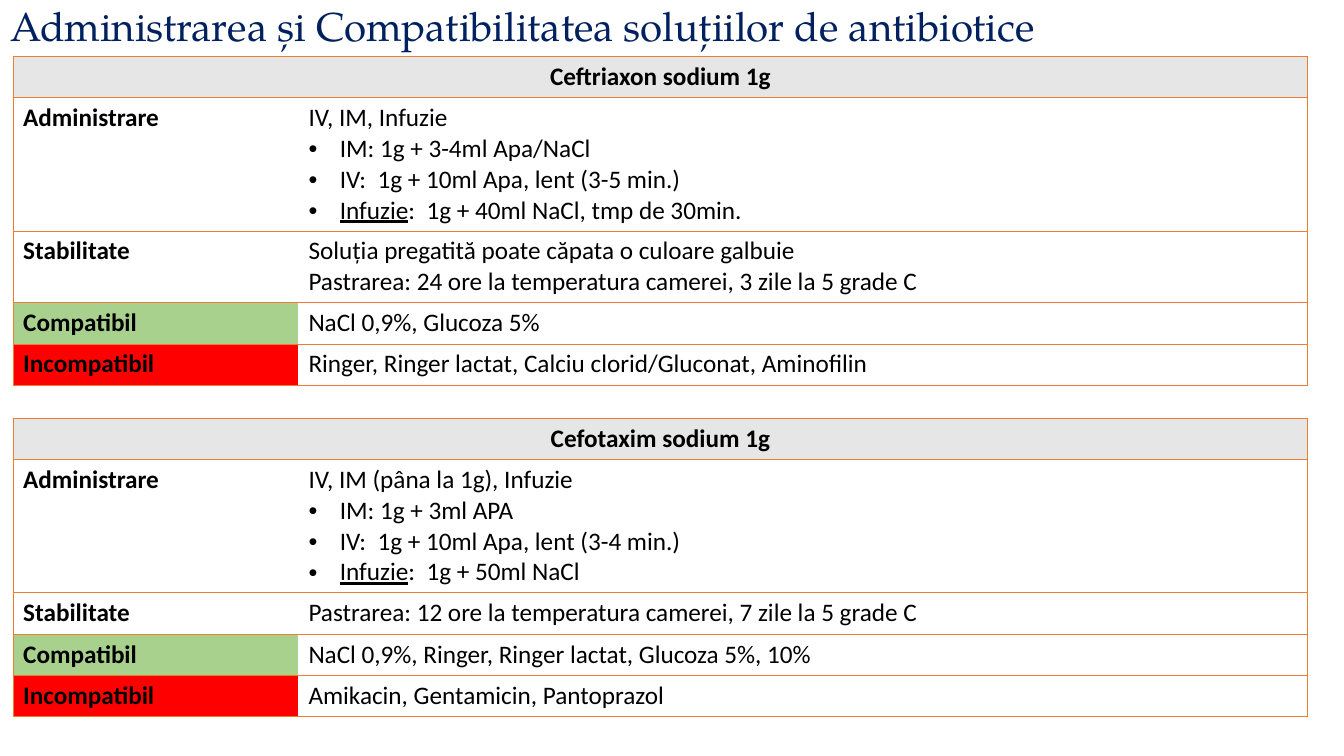
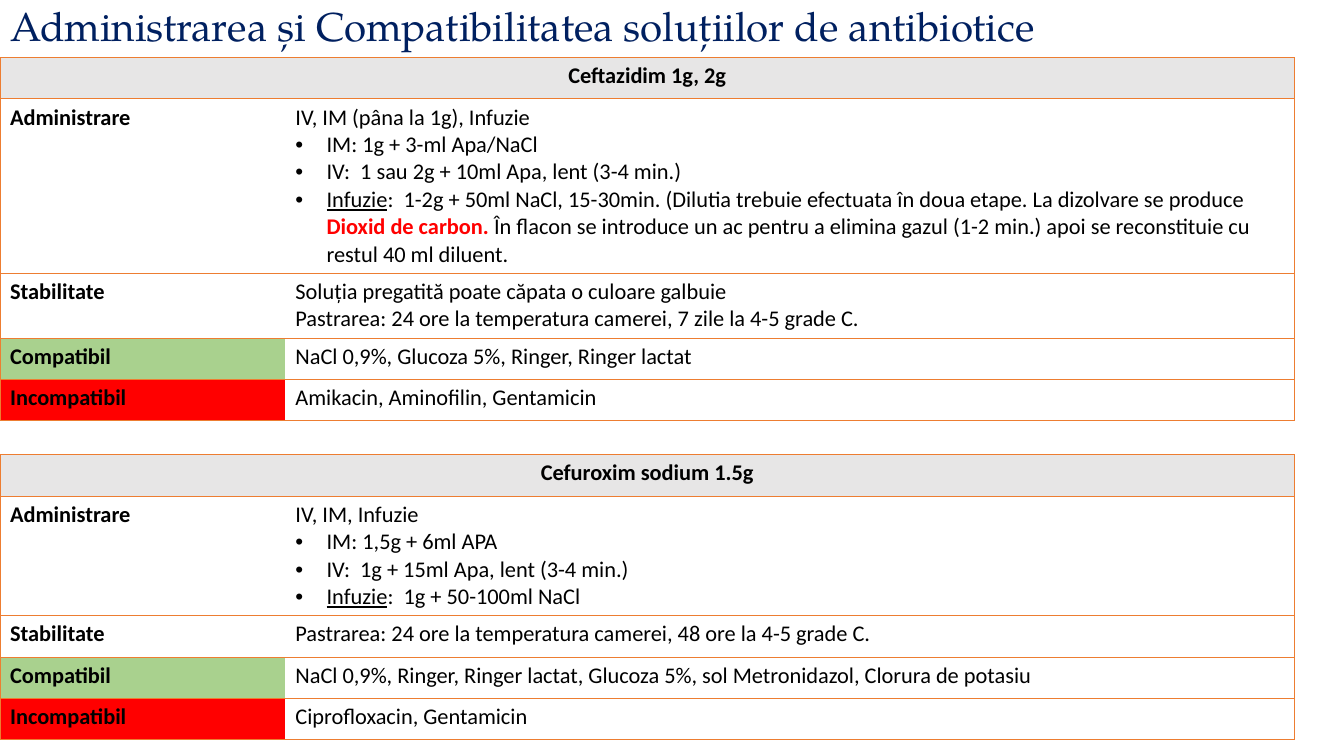
from lxml import etree
from pptx import Presentation
from pptx import util as u
from pptx.dml.color import RGBColor
from pptx.enum import text
from pptx.oxml.ns import qn

COLOURS = {"title": "002060", "text": "000000", "alert": "FF0000", "line": "ED7D31",
           "header": "E7E6E6", "plain": "FFFFFF", "good": "A9D18E", "bad": "FF0000"}
TITLE = "Administrarea și Compatibilitatea soluțiilor de antibiotice"
TITLE_FONT, BODY_FONT = "TeX Gyre Pagella", "Calibri"
ROWS = [("Administrare", "plain"), ("Stabilitate", "plain"),
        ("Compatibil", "good"), ("Incompatibil", "bad")]
COLUMNS, ROW_HEIGHT, INDENT = (2.83, 10.01), 0.41, 0.31
NO_STYLE = "{2D5ABB26-0587-4C30-8999-92F81FD0307C}"

# Content: a paragraph is a string or a list of (text, style) runs; "• " marks a bullet
GALBUIE = "Soluția pregatită poate căpata o culoare galbuie"


def infusion(*runs):
    return [("• ", None), ("Infuzie", "underline"), *runs]


SLIDES = [
    {"left": 0.13, "size": 18, "drugs": [
        {"name": "Ceftriaxon sodium 1g", "top": 0.56, "rows": [
            ["IV, IM, Infuzie", "• IM: 1g + 3-4ml Apa/NaCl",
             "• IV:  1g + 10ml Apa, lent (3-5 min.)",
             infusion((":  1g + 40ml NaCl, tmp de 30min.", None))],
            [GALBUIE, "Pastrarea: 24 ore la temperatura camerei, 3 zile la 5 grade C"],
            ["NaCl 0,9%, Glucoza 5%"],
            ["Ringer, Ringer lactat, Calciu clorid/Gluconat, Aminofilin"]]},
        {"name": "Cefotaxim sodium 1g", "top": 4.15, "rows": [
            ["IV, IM (pâna la 1g), Infuzie", "• IM: 1g + 3ml APA",
             "• IV:  1g + 10ml Apa, lent (3-4 min.)",
             infusion((":  1g + 50ml NaCl", None))],
            ["Pastrarea: 12 ore la temperatura camerei, 7 zile la 5 grade C"],
            ["NaCl 0,9%, Ringer, Ringer lactat, Glucoza 5%, 10%"],
            ["Amikacin, Gentamicin, Pantoprazol"]]}]},
    {"left": 0, "size": 16, "drugs": [
        {"name": "Ceftazidim 1g, 2g", "top": 0.57, "rows": [
            ["IV, IM (pâna la 1g), Infuzie", "• IM: 1g + 3-ml Apa/NaCl",
             "• IV:  1 sau 2g + 10ml Apa, lent (3-4 min.)",
             infusion((":  1-2g + 50ml NaCl, 15-30min. (Dilutia trebuie efectuata în doua "
                       "etape. La dizolvare se produce ", None),
                      ("Dioxid de carbon. ", "alert"),
                      ("În flacon se introduce un ac pentru a elimina gazul (1-2 min.) apoi "
                       "se reconstituie cu restul 40 ml diluent.", None))],
            [GALBUIE, "Pastrarea: 24 ore la temperatura camerei, 7 zile la 4-5 grade C."],
            ["NaCl 0,9%, Glucoza 5%, Ringer, Ringer lactat"],
            ["Amikacin, Aminofilin, Gentamicin"]]},
        {"name": "Cefuroxim sodium 1.5g", "top": 4.51, "rows": [
            ["IV, IM, Infuzie", "• IM: 1,5g + 6ml APA",
             "• IV:  1g + 15ml Apa, lent (3-4 min.)",
             infusion((":  1g + 50-100ml NaCl", None))],
            ["Pastrarea: 24 ore la temperatura camerei, 48 ore la 4-5 grade C."],
            ["NaCl 0,9%, Ringer, Ringer lactat, Glucoza 5%, sol Metronidazol, "
             "Clorura de potasiu"],
            ["Ciprofloxacin, Gentamicin"]]}]},
]


def rgb(name):
    return RGBColor.from_string(COLOURS[name])


def add_run(paragraph, words, font, size, colour="text", bold=False):
    run = paragraph.add_run()
    run.text = words
    run.font.name, run.font.size, run.font.bold = font, u.Pt(size), bold
    run.font.color.rgb = rgb(colour)
    return run


def add_title(slide):
    title = slide.shapes.title
    title.left, title.top = 0, 0
    title.width, title.height = u.Inches(11.5), u.Inches(0.57)
    frame = title.text_frame
    frame.word_wrap = True
    frame.auto_size = text.MSO_AUTO_SIZE.NONE
    frame.vertical_anchor = text.MSO_ANCHOR.MIDDLE
    paragraph = frame.paragraphs[0]
    paragraph.alignment = text.PP_ALIGN.LEFT
    paragraph.line_spacing = 0.9
    add_run(paragraph, TITLE, TITLE_FONT, 28.8, "title")


def set_bullet(paragraph):
    properties = paragraph._p.get_or_add_pPr()
    properties.set("marL", str(u.Inches(INDENT)))
    properties.set("indent", str(-u.Inches(INDENT)))
    etree.SubElement(properties, qn("a:buFont"), typeface="Arial")
    etree.SubElement(properties, qn("a:buChar"), char="•")


def style_cell(cell, fill, sides):
    """Draw the listed sides (L, R, T, B), then fill the cell."""
    properties = cell._tc.get_or_add_tcPr()
    for side in sides:
        line = etree.SubElement(properties, qn(f"a:ln{side}"), w=str(u.Pt(0.5)))
        solid = etree.SubElement(line, qn("a:solidFill"))
        etree.SubElement(solid, qn("a:srgbClr"), val=COLOURS["line"])
    cell.fill.solid()
    cell.fill.fore_color.rgb = rgb(fill)


def write_label(cell, words, size):
    paragraph = cell.text_frame.paragraphs[0]
    add_run(paragraph, words, BODY_FONT, size, bold=True)
    return paragraph


def write_details(cell, lines, size):
    frame = cell.text_frame
    for index, line in enumerate(lines):
        paragraph = frame.paragraphs[0] if index == 0 else frame.add_paragraph()
        runs = [(line, None)] if isinstance(line, str) else line
        if runs[0][0].startswith("• "):
            set_bullet(paragraph)
            runs = [(runs[0][0][2:], None), *runs[1:]]
        for words, style in runs:
            if words:
                alert = style == "alert"
                run = add_run(paragraph, words, BODY_FONT, size,
                              "alert" if alert else "text", alert)
                if style == "underline":
                    run.font.underline = True


def add_drug_table(slide, drug, left, size):
    count = len(ROWS) + 1
    frame = slide.shapes.add_table(count, len(COLUMNS), u.Inches(left), u.Inches(drug["top"]),
                                   u.Inches(sum(COLUMNS)), u.Inches(count * ROW_HEIGHT))
    table = frame.table
    table._tbl.tblPr.find(qn("a:tableStyleId")).text = NO_STYLE
    for column, width in zip(table.columns, COLUMNS):
        column.width = u.Inches(width)
    for row in table.rows:
        row.height = u.Inches(ROW_HEIGHT)

    # Header across both columns
    header = table.cell(0, 0)
    header.merge(table.cell(0, 1))
    style_cell(header, "header", "LRTB")
    style_cell(table.cell(0, 1), "header", "RTB")
    write_label(header, drug["name"], size).alignment = text.PP_ALIGN.CENTER

    # Label and details, row by row
    for index, ((label, fill), lines) in enumerate(zip(ROWS, drug["rows"]), 1):
        label_cell, details_cell = table.cell(index, 0), table.cell(index, 1)
        style_cell(label_cell, fill, "LTB")
        style_cell(details_cell, "plain", "RTB")
        write_label(label_cell, label, size)
        write_details(details_cell, lines, size)


def main():
    presentation = Presentation()
    presentation.slide_width, presentation.slide_height = u.Inches(13.33), u.Inches(7.5)
    title_only = presentation.slide_layouts[5]
    for content in SLIDES:
        slide = presentation.slides.add_slide(title_only)
        add_title(slide)
        for drug in content["drugs"]:
            add_drug_table(slide, drug, content["left"], content["size"])
    presentation.save("out.pptx")


if __name__ == "__main__":
    main()
